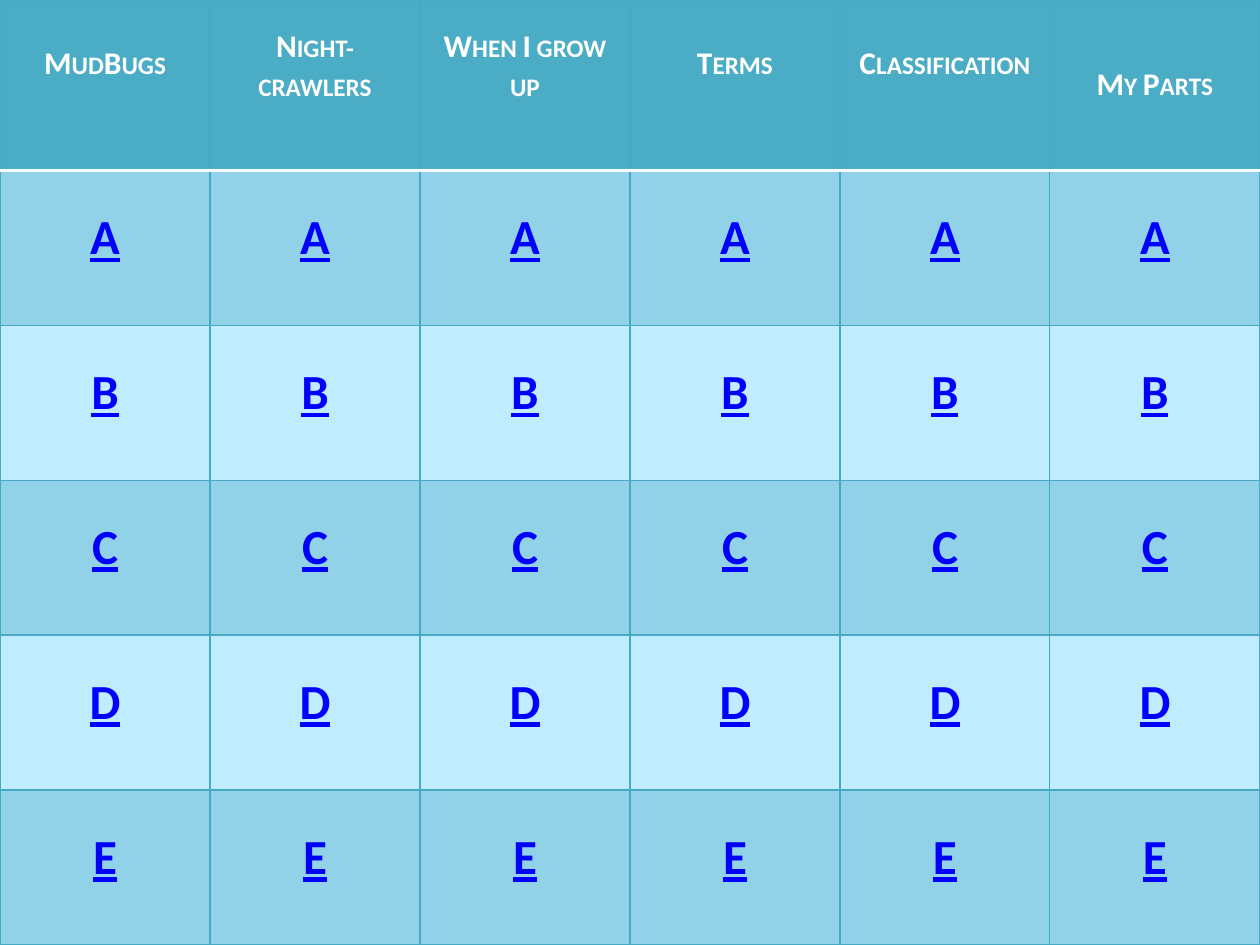
from lxml.etree import SubElement
from pptx import Presentation
from pptx.dml.color import RGBColor as Rgb
from pptx.enum.text import MSO_ANCHOR as Anchor, PP_ALIGN as Align
from pptx.oxml.ns import qn
from pptx.util import Cm, Pt

COLORS = {
    "header": "4BACC6", "dark_band": "91D2E8", "light_band": "BFECFF",
    "grid": "46AAC5", "white": "FFFFFF", "letter": "0000FF",
}
CATEGORIES = {
    "MudBugs": 0.9, "Night-crawlers": 0.56, "When I grow up": 0.56,
    "Terms": 0.9, "Classification": 0.9, "My Parts": 1.33,
}
LETTERS = "ABCDE"
LETTER_TOP = 0.77
WIDTH, HEIGHT, HEADER_HEIGHT = 25.4, 19.05, 3.43
HEADING = {"name": "Calibri", "size": Pt(18), "bold": True}
LETTER = {"name": "Calibri", "size": Pt(28), "bold": True, "underline": True}


class GameBoard:
    """Hold the board's style and slide, and draw its elements."""

    def __init__(self, slide):
        self.slide = slide
        self.grid_line = ("grid", 0.75)
        self.divider = ("white", 2)

    def table(self, rows, columns):
        board = self.slide.shapes.add_table(
            rows, columns, 0, 0, Cm(WIDTH), Cm(HEIGHT)).table
        for column in board.columns:
            column.width = Cm(WIDTH / columns)
        for index, row in enumerate(board.rows):
            row.height = Cm((HEIGHT - HEADER_HEIGHT) / (rows - 1) if index else HEADER_HEIGHT)
        return board

    def borders(self, cell, **edges):
        properties = cell._tc.get_or_add_tcPr()
        for side in ("lnL", "lnR", "lnT", "lnB"):
            color, points = edges.get(side, self.grid_line)
            line = SubElement(properties, qn(f"a:{side}"), w=str(Pt(points)))
            fill = SubElement(line, qn("a:solidFill"))
            SubElement(fill, qn("a:srgbClr"), val=COLORS[color])

    def cell(self, cell, text, style, color, band, top, **edges):
        self.borders(cell, **edges)
        cell.fill.solid()
        cell.fill.fore_color.rgb = Rgb.from_string(COLORS[band])
        cell.margin_top = Cm(top)
        cell.vertical_anchor = Anchor.TOP
        paragraph = cell.text_frame.paragraphs[0]
        paragraph.alignment = Align.CENTER
        label = paragraph.add_run()
        label.text = text
        for name, value in style.items():
            setattr(label.font, name, value)
        label.font.color.rgb = Rgb.from_string(COLORS[color])
        return label

    def heading(self, cell, category, top):
        label = self.cell(cell, category, HEADING, "white", "header", top, lnB=self.divider)
        label._r.get_or_add_rPr().set("cap", "small")

    def letter(self, cell, letter, row):
        band = "dark_band" if row % 2 else "light_band"
        edges = {"lnT": self.divider} if row == 1 else {}
        self.cell(cell, letter, LETTER, "letter", band, LETTER_TOP, **edges)


def main():
    deck = Presentation()
    deck.slide_width, deck.slide_height = Cm(WIDTH), Cm(HEIGHT)
    game = GameBoard(deck.slides.add_slide(deck.slide_layouts[6]))
    board = game.table(len(LETTERS) + 1, len(CATEGORIES))
    for column, (category, top) in enumerate(CATEGORIES.items()):
        game.heading(board.cell(0, column), category, top)
        for row, letter in enumerate(LETTERS, 1):
            game.letter(board.cell(row, column), letter, row)
    deck.save("out.pptx")


if __name__ == "__main__":
    main()
